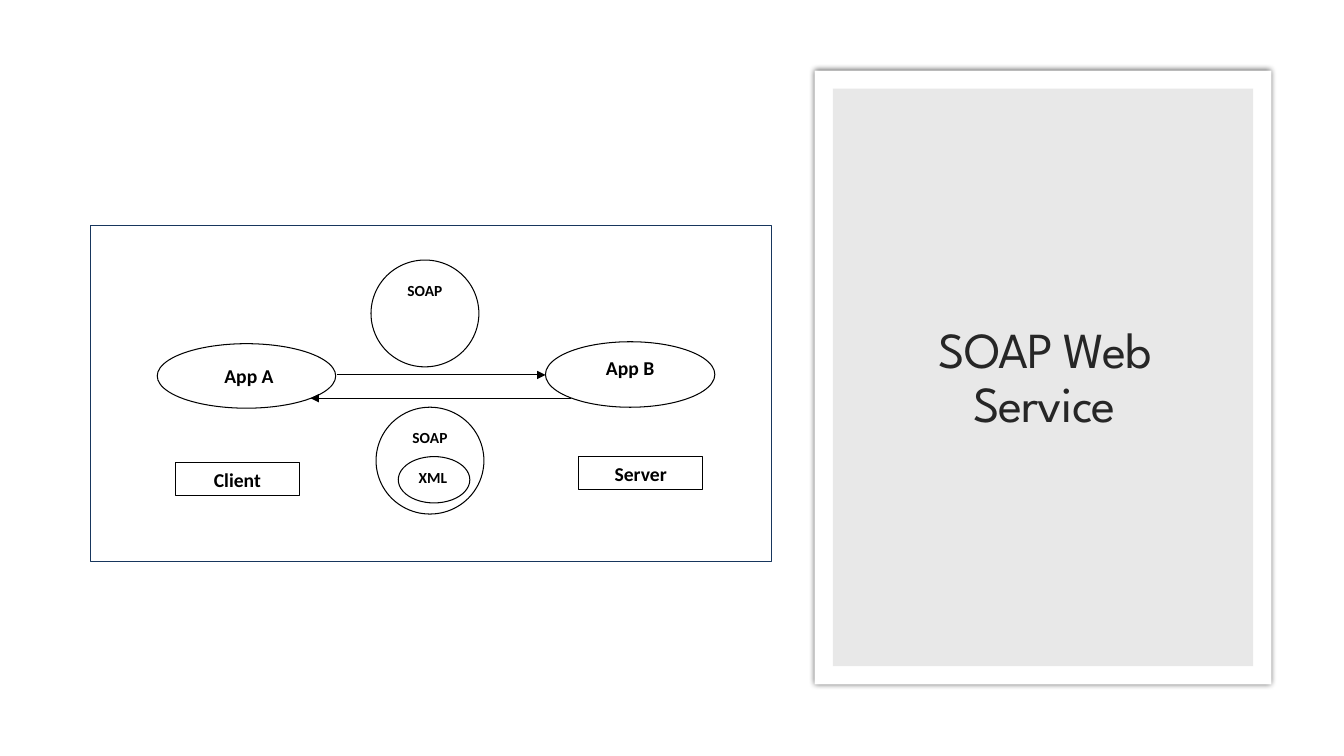
from lxml.etree import SubElement
from pptx import Presentation
from pptx.dml.color import RGBColor
from pptx.enum.shapes import MSO_CONNECTOR, MSO_SHAPE
from pptx.enum.text import MSO_ANCHOR, MSO_AUTO_SIZE, PP_ALIGN
from pptx.oxml.ns import qn
from pptx.util import Inches, Pt

WHITE = RGBColor(0xFF, 0xFF, 0xFF)
BLACK = RGBColor(0, 0, 0)
GREY = RGBColor(0xD9, 0xD9, 0xD9)
DARK = RGBColor(0x26, 0x26, 0x26)
NAVY = RGBColor(0x17, 0x36, 0x5D)
OVAL, RECT = MSO_SHAPE.OVAL, MSO_SHAPE.RECTANGLE


def put_text(shape, text, size=14, font="Calibri", color=BLACK, bold=True,
             align=PP_ALIGN.CENTER, anchor=MSO_ANCHOR.TOP, left=0.1,
             right=0.1, lines=None, track=None):
    frame = shape.text_frame
    frame.word_wrap = True
    frame.auto_size = MSO_AUTO_SIZE.NONE
    frame.vertical_anchor = anchor
    frame.margin_left, frame.margin_right = Inches(left), Inches(right)
    para = frame.paragraphs[0]
    para.alignment = align
    if lines:
        para.line_spacing = lines
    run = para.add_run()
    run.text = text
    run.font.name, run.font.size = font, Pt(size)
    run.font.bold, run.font.color.rgb = bold, color
    if track:
        run.font._element.set("spc", str(int(track * 100)))


def add_box(shapes, kind, at, fill=WHITE, line=None):
    box = shapes.add_shape(kind, *map(Inches, at))
    box.shadow.inherit = False
    if fill is None:
        box.fill.background()
    else:
        box.fill.solid()
        box.fill.fore_color.rgb = fill
    if line is None:
        box.line.fill.background()
    else:
        box.line.color.rgb = line
        box.line.width = Pt(0.75)
    return box


def add_node(shapes, kind, at, text, **style):
    put_text(add_box(shapes, kind, at, line=BLACK), text, **style)


def add_arrow(shapes, start, end, y):
    arrow = shapes.add_connector(MSO_CONNECTOR.STRAIGHT, Inches(start),
                                 Inches(y), Inches(end), Inches(y))
    arrow.line.color.rgb = BLACK
    arrow.line.width = Pt(0.75)
    SubElement(arrow.line._get_or_add_ln(), qn("a:tailEnd"), type="triangle")
    SubElement(arrow.element.spPr, qn("a:effectLst"))


def set_alpha(parent, percent):
    SubElement(parent, qn("a:alpha"), val=str(percent * 1000))


def add_glow(box):
    effects = box.element.spPr.find(qn("a:effectLst"))
    shade = SubElement(effects, qn("a:outerShdw"), blurRad=str(Pt(4)),
                       dist="0", algn="ctr", rotWithShape="0")
    set_alpha(SubElement(shade, qn("a:srgbClr"), val="000000"), 66)


def add_panel(slide):
    add_box(slide.shapes, RECT, (0, 0, 13.33, 7.5))
    add_glow(add_box(slide.shapes, RECT, (8.08, 0.7, 4.53, 6.09)))
    inner = add_box(slide.shapes, RECT, (8.26, 0.88, 4.17, 5.73), fill=GREY)
    set_alpha(inner.element.spPr.find(".//" + qn("a:srgbClr")), 60)

    # Title sits in front of its panel
    title = slide.shapes.title
    title.left, title.top = Inches(8.47), Inches(1.06)
    title.width, title.height = Inches(3.78), Inches(5.4)
    put_text(title, "SOAP Web Service", size=36, font="League Spartan",
             color=DARK, bold=False, anchor=MSO_ANCHOR.MIDDLE,
             lines=0.9, track=-0.7)
    inner.element.addnext(title.element)


def add_diagram(slide):
    shapes = slide.shapes.add_group_shape().shapes
    add_box(shapes, RECT, (0.9, 2.24, 6.75, 3.33), fill=None, line=NAVY)

    # Client and server
    add_node(shapes, OVAL, (1.56, 3.41, 1.77, 0.64), "App A",
             anchor=MSO_ANCHOR.MIDDLE, left=0.15)
    add_node(shapes, RECT, (1.74, 4.59, 1.23, 0.33), "Client")
    add_arrow(shapes, 3.34, 5.41, 3.72)
    add_node(shapes, OVAL, (5.41, 3.39, 1.68, 0.65), "App B")
    add_arrow(shapes, 5.66, 3.08, 3.95)
    add_node(shapes, RECT, (5.74, 4.53, 1.23, 0.33), "Server")

    # Messages
    add_node(shapes, OVAL, (3.73, 4.04, 1.07, 1.06), "SOAP", size=11)
    add_node(shapes, OVAL, (3.95, 4.53, 0.71, 0.46), "XML", size=11,
             align=PP_ALIGN.LEFT, right=0)
    add_node(shapes, OVAL, (3.68, 2.58, 1.07, 1.06), "SOAP", size=11)


def main():
    deck = Presentation()
    deck.slide_width, deck.slide_height = Inches(13.33), Inches(7.5)
    slide = deck.slides.add_slide(deck.slide_layouts[5])
    add_panel(slide)
    add_diagram(slide)
    deck.save("out.pptx")


if __name__ == "__main__":
    main()
